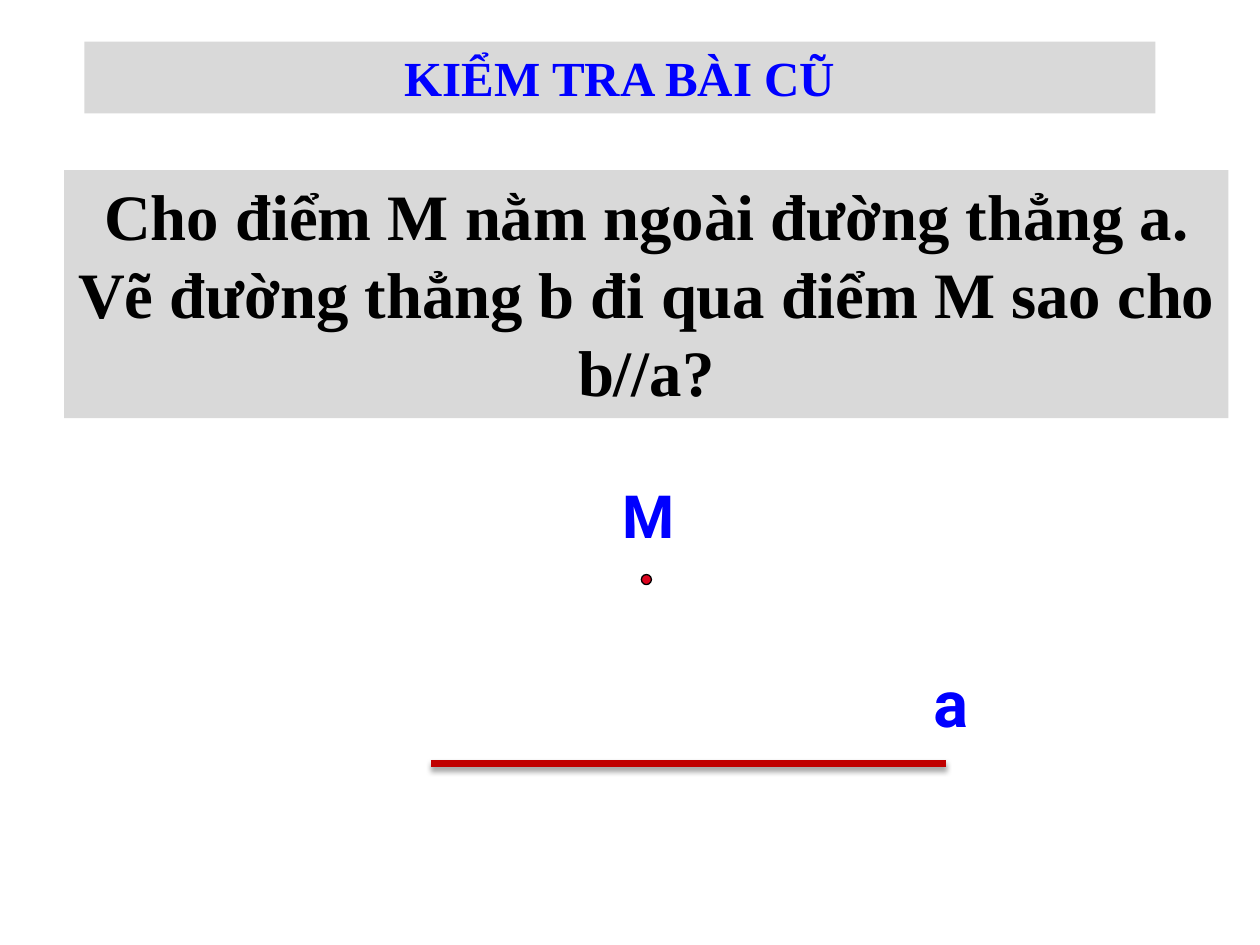
from dataclasses import dataclass

from lxml import etree
from pptx import Presentation
from pptx import util as u
from pptx.dml.color import RGBColor
from pptx.enum import shapes, text
from pptx.oxml import ns

WIDTH, HEIGHT = 10, 7.5


@dataclass(frozen=True)
class Theme:
    panel: str = "D9D9D9"
    ink: str = "000000"
    accent: str = "0000FF"
    point: str = "DC041E"
    line: str = "C00000"
    serif: str = "Times New Roman"
    sans: str = "Roboto"
    title_size: int = 28
    label_size: int = 34
    body_size: int = 37


@dataclass(frozen=True)
class Box:
    """Place on the slide, in inches."""
    left: float
    top: float
    width: float
    height: float

    def emu(self) -> tuple:
        return tuple(u.Inches(v) for v in (self.left, self.top, self.width, self.height))


@dataclass(frozen=True)
class Label:
    text: str
    box: Box
    size: int


THEME = Theme()
TITLE_BOX = Box(0.67, 0.33, 8.5, 0.57)
QUESTION_BOX = Box(0.51, 1.35, 9.24, 1.97)
POINT_BOX = Box(5.09, 4.56, 0.08, 0.08)
LINE_START, LINE_END, LINE_Y = 3.42, 7.51, 6.06
LABELS = [
    Label("M", Box(4.84, 3.75, 1.33, 0.67), THEME.label_size),
    Label("a", Box(7.31, 5.21, 1.33, 0.72), THEME.body_size),
]


def paint(sp, color: str) -> None:
    sp.fill.solid()
    sp.fill.fore_color.rgb = RGBColor.from_string(color)


def write(sp, words: str, font: str, size: int, color: str, align) -> None:
    tf = sp.text_frame
    tf.text = words
    tf.word_wrap = True
    tf.auto_size = text.MSO_AUTO_SIZE.NONE
    tf.vertical_anchor = text.MSO_ANCHOR.TOP
    p = tf.paragraphs[0]
    p.alignment = align
    p.space_before = u.Pt(0)
    r = p.runs[0]
    r.font.name = font
    r.font.size = u.Pt(size)
    r.font.bold = True
    r.font.color.rgb = RGBColor.from_string(color)


def add_shadow(line) -> None:
    """Soft shadow straight below the line."""
    effects = etree.SubElement(line._element.spPr, ns.qn("a:effectLst"))
    shadow = etree.SubElement(
        effects, ns.qn("a:outerShdw"), blurRad=str(u.Pt(3.1)), dist=str(u.Pt(1.8)),
        dir=str(90 * 60000), rotWithShape="0")
    color = etree.SubElement(shadow, ns.qn("a:srgbClr"), val=THEME.ink)
    etree.SubElement(color, ns.qn("a:alpha"), val="35000")


def main() -> None:
    prs = Presentation()
    prs.slide_width, prs.slide_height = u.Inches(WIDTH), u.Inches(HEIGHT)
    s = prs.slides.add_slide(prs.slide_layouts.get_by_name("Title Only"))
    center, left = text.PP_ALIGN.CENTER, text.PP_ALIGN.LEFT

    # Title
    title = s.shapes.title
    title.left, title.top, title.width, title.height = TITLE_BOX.emu()
    paint(title, THEME.panel)
    write(title, "KIỂM TRA BÀI CŨ", THEME.serif, THEME.title_size, THEME.accent, center)

    # Question
    question = s.shapes.add_shape(shapes.MSO_SHAPE.RECTANGLE, *QUESTION_BOX.emu())
    question.shadow.inherit = False
    paint(question, THEME.panel)
    question.line.fill.background()
    write(question,
          "Cho điểm M nằm ngoài đường thẳng a. Vẽ đường thẳng b đi qua điểm M sao cho b//a?",
          THEME.serif, THEME.body_size, THEME.ink, center)

    # Point M
    point = s.shapes.add_shape(shapes.MSO_SHAPE.OVAL, *POINT_BOX.emu())
    point.shadow.inherit = False
    paint(point, THEME.point)
    point.line.color.rgb = RGBColor.from_string(THEME.ink)
    point.line.width = u.Pt(0.75)

    # Names of the point and the line
    for label in LABELS:
        sp = s.shapes.add_textbox(*label.box.emu())
        write(sp, label.text, THEME.sans, label.size, THEME.accent, left)

    # Line a
    line = s.shapes.add_connector(
        shapes.MSO_CONNECTOR.STRAIGHT, u.Inches(LINE_START), u.Inches(LINE_Y),
        u.Inches(LINE_END), u.Inches(LINE_Y))
    line.line.color.rgb = RGBColor.from_string(THEME.line)
    line.line.width = u.Pt(4.5)
    add_shadow(line)

    prs.save("out.pptx")


if __name__ == "__main__":
    main()
